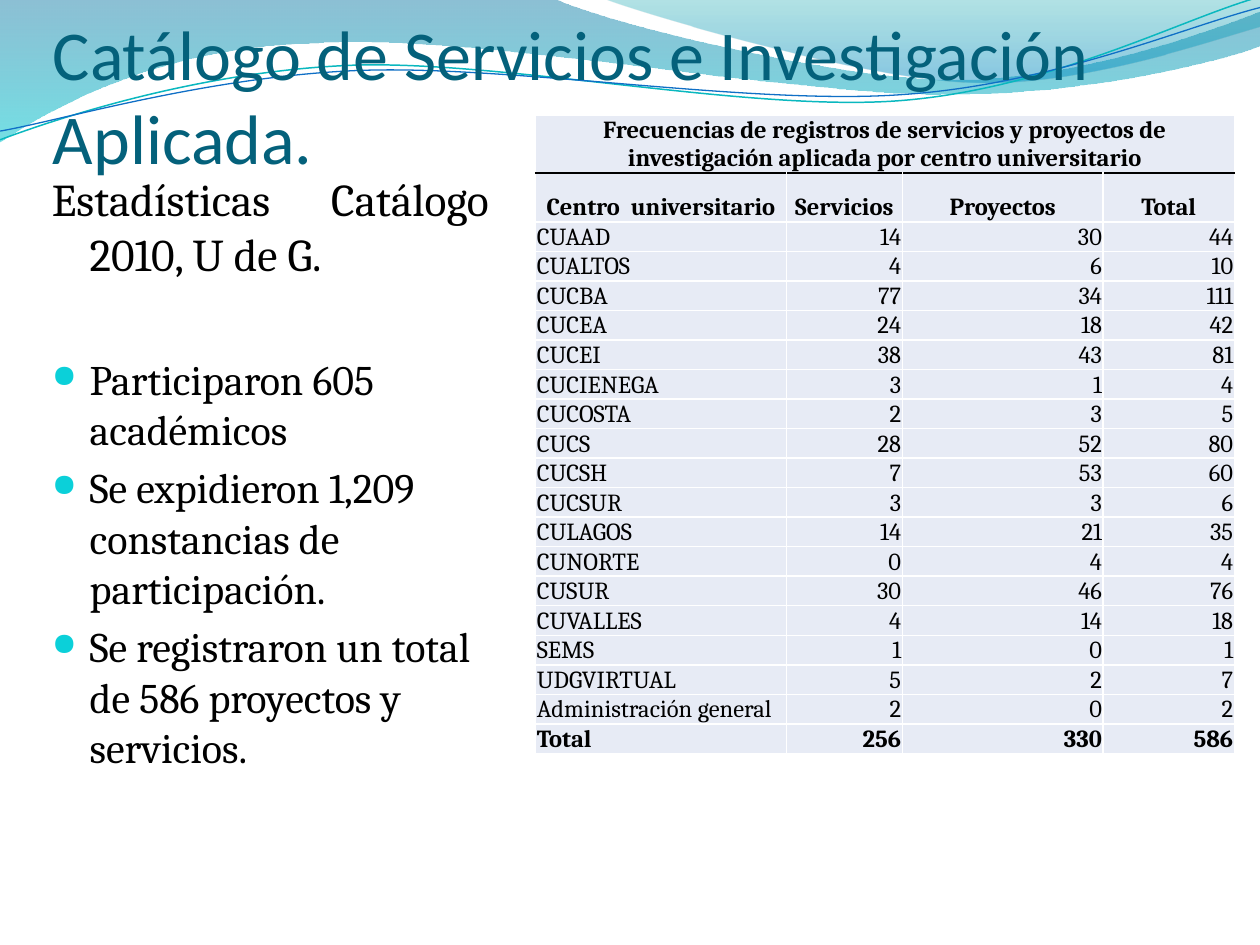
from dataclasses import dataclass

import pptx
import pptx.dml.color
import pptx.enum.text
import pptx.oxml.ns
import pptx.util
from lxml import etree

Pt = pptx.util.Pt
RGBColor = pptx.dml.color.RGBColor
Align = pptx.enum.text.PP_ALIGN
Anchor = pptx.enum.text.MSO_ANCHOR
qn = pptx.oxml.ns.qn

WHITE = RGBColor(0xFF, 0xFF, 0xFF)
BLACK = RGBColor(0, 0, 0)
TITLE_TEAL = RGBColor(0x04, 0x61, 0x7B)
BULLET_CYAN = RGBColor(0x0B, 0xD0, 0xD9)
CELL_FILL = RGBColor(0xE7, 0xEB, 0xF5)
LINE_TEAL = RGBColor(0x0A, 0xB8, 0xBF)
LINE_BLUE = RGBColor(0x0F, 0x6F, 0xC6)
DEEP_BLUE = RGBColor(0x00, 0x74, 0xA1)
AQUA = RGBColor(0x00, 0xC6, 0xCF)
SEA_GREEN = RGBColor(0x00, 0xA1, 0xA9)
SKY_BLUE = RGBColor(0x00, 0x8B, 0xBF)

BODY_FONT = "Cambria"
INDENT = Pt(21.6)
UNITS_PER_POINT = 100


@dataclass
class GradientStop:
    position: float
    color: RGBColor
    opacity: int


@dataclass
class Wave:
    """Outline in points: each segment is one line end or three Bezier points."""
    start: tuple
    segments: list
    stops: tuple = ()
    line_color: RGBColor | None = None
    line_width: float = 0


@dataclass
class BodyItem:
    text: str
    size: float
    space_before: float
    bulleted: bool = True


WAVES = [
    Wave((0, 0), [
        [(316.8, -0.7)],
        [(342.7, 12.2), (478.1, 45.4), (545.8, 45.4)],
        [(614.2, 45.4), (689.8, 18.7), (720, 6.5)],
        [(720.7, 25.9)],
        [(707.8, 31.7), (626.4, 54.7), (537.1, 54)],
        [(447.8, 54), (275, 20.2), (185, 24.5)],
        [(92.9, 25.9), (33.1, 59.8), (-0.7, 81.4)],
    ], stops=(GradientStop(0, DEEP_BLUE, 45), GradientStop(1, AQUA, 55))),
    Wave((344.9, -0.7), [
        [(366.5, 7.9), (491, 44.6), (553.7, 46.8)],
        [(616.3, 49.7), (691.9, 23), (720, 15.1)],
        [(720, 0)],
    ], stops=(GradientStop(0, SEA_GREEN, 30), GradientStop(0.8, SKY_BLUE, 45))),
    Wave((0, 79.9), [
        [(34.6, 67), (113.8, 41), (199.4, 37.4)],
        [(284.4, 33.8), (427, 64.1), (513.4, 57.6)],
        [(599.8, 51.1), (675.4, 10.8), (718.6, -1.4)],
    ], line_color=LINE_TEAL, line_width=0.85),
    Wave((0, 74.9), [
        [(33.8, 69.1), (118.1, 43.9), (203.8, 40.3)],
        [(290.2, 36.7), (429.8, 60.5), (516.2, 54)],
        [(601.9, 48.2), (677.5, 15.1), (720, 4.3)],
    ], line_color=LINE_BLUE, line_width=0.75),
]

BODY_ITEMS = [
    BodyItem("Estadísticas  Catálogo 2010, U de G.", 26, 0, bulleted=False),
    BodyItem("Participaron 605 académicos", 24, 41.5),
    BodyItem("Se expidieron 1,209 constancias de participación.", 24, 4.5),
    BodyItem("Se registraron un total de 586 proyectos y servicios.", 24, 4.5),
]

TABLE_TITLE = ("Frecuencias de registros de servicios y proyectos de "
               "investigación aplicada por centro universitario")
HEADINGS = ("Centro  universitario", "Servicios", "Proyectos", "Total")
RECORDS = [
    ("CUAAD", 14, 30, 44), ("CUALTOS", 4, 6, 10), ("CUCBA", 77, 34, 111),
    ("CUCEA", 24, 18, 42), ("CUCEI", 38, 43, 81), ("CUCIENEGA", 3, 1, 4),
    ("CUCOSTA", 2, 3, 5), ("CUCS", 28, 52, 80), ("CUCSH", 7, 53, 60),
    ("CUCSUR", 3, 3, 6), ("CULAGOS", 14, 21, 35), ("CUNORTE", 0, 4, 4),
    ("CUSUR", 30, 46, 76), ("CUVALLES", 4, 14, 18), ("SEMS", 1, 0, 1),
    ("UDGVIRTUAL", 5, 2, 7), ("Administración general", 2, 0, 2),
    ("Total", 256, 330, 586),
]
COLUMN_WIDTHS = (143.3, 66.2, 114.8, 75)
TITLE_ROW_HEIGHT, HEADING_ROW_HEIGHT, RECORD_ROW_HEIGHT = 32.8, 28, 16.87


def bend_segments(shape, segments: list) -> None:
    """Join the straight pieces of each three-point segment into one Bezier curve."""
    pieces = list(shape._element.iter(qn("a:lnTo")))
    for segment in segments:
        group, pieces = pieces[:len(segment)], pieces[len(segment):]
        if len(group) == 3:
            curve = etree.Element(qn("a:cubicBezTo"))
            group[0].addprevious(curve)
            for piece in group:
                curve.append(piece[0])
                piece.getparent().remove(piece)


def draw_wave(slide, wave: Wave) -> None:
    points = [wave.start] + [point for segment in wave.segments for point in segment]
    units = [(x * UNITS_PER_POINT, y * UNITS_PER_POINT) for x, y in points]
    builder = slide.shapes.build_freeform(*units[0], scale=Pt(1) / UNITS_PER_POINT)
    builder.add_line_segments(units[1:], close=bool(wave.stops))
    shape = builder.convert_to_shape()
    bend_segments(shape, wave.segments)
    shape.shadow.inherit = False
    if not wave.stops:
        shape.fill.background()
        shape.line.color.rgb = wave.line_color
        shape.line.width = Pt(wave.line_width)
        return
    shape.line.fill.background()
    shape.fill.gradient()
    shape.fill.gradient_angle = 270
    for gradient_stop, wanted in zip(shape.fill.gradient_stops, wave.stops):
        gradient_stop.position = wanted.position
        gradient_stop.color.rgb = wanted.color
    for color, wanted in zip(shape._element.spPr.iter(qn("a:srgbClr")), wave.stops):
        etree.SubElement(color, qn("a:alpha"), val=str(wanted.opacity * 1000))


def place_title(slide) -> None:
    title = slide.shapes.title
    slide.shapes._spTree.append(title._element)  # in front of the waves
    title.left, title.top, title.width, title.height = Pt(30.2), Pt(12.2), Pt(648), Pt(90)
    frame = title.text_frame
    frame.text = "Catálogo de Servicios e Investigación Aplicada."
    frame.word_wrap = True
    frame.auto_size = pptx.enum.text.MSO_AUTO_SIZE.NONE
    frame.vertical_anchor = Anchor.BOTTOM
    frame.margin_left = frame.margin_right = frame.margin_bottom = 0
    frame.margin_top = Pt(3.6)
    paragraph = frame.paragraphs[0]
    paragraph.alignment = Align.LEFT
    set_font(paragraph, "Calibri", 40, TITLE_TEAL)


def set_font(paragraph, name: str, size: float, color: RGBColor, bold: bool = False) -> None:
    font = paragraph.font
    font.name, font.size, font.bold = name, Pt(size), bold
    font.color.rgb = color


def set_hanging_indent(paragraph, bulleted: bool) -> None:
    properties = paragraph._p.get_or_add_pPr()
    properties.set("marL", str(INDENT))
    properties.set("indent", str(-INDENT))
    if bulleted:
        color = etree.SubElement(properties, qn("a:buClr"))
        etree.SubElement(color, qn("a:srgbClr"), val=str(BULLET_CYAN))
        etree.SubElement(properties, qn("a:buSzPct"), val="75000")
        etree.SubElement(properties, qn("a:buChar"), char="●")


def draw_body(slide) -> None:
    frame = slide.shapes.add_textbox(Pt(22.6), Pt(123.8), Pt(264.2), Pt(354.2)).text_frame
    frame.word_wrap = True
    frame.vertical_anchor = Anchor.MIDDLE
    frame.margin_bottom = Pt(66.3)
    for index, item in enumerate(BODY_ITEMS):
        paragraph = frame.add_paragraph() if index else frame.paragraphs[0]
        paragraph.text = item.text
        paragraph.alignment = Align.LEFT if item.bulleted else Align.JUSTIFY
        paragraph.space_before = Pt(item.space_before)
        set_hanging_indent(paragraph, item.bulleted)
        set_font(paragraph, BODY_FONT, item.size, BLACK)


def format_cell(cell, text: str, alignment, bold: bool, black_side: str = "") -> None:
    cell.text = text
    cell.vertical_anchor = Anchor.BOTTOM
    cell.margin_left = cell.margin_right = cell.margin_top = Pt(0.7)
    cell.margin_bottom = 0
    properties = cell._tc.get_or_add_tcPr()
    for side in "LRTB":
        line = etree.SubElement(properties, qn(f"a:ln{side}"), w=str(Pt(1)))
        fill = etree.SubElement(line, qn("a:solidFill"))
        color = BLACK if side == black_side else WHITE
        etree.SubElement(fill, qn("a:srgbClr"), val=str(color))
    cell.fill.solid()
    cell.fill.fore_color.rgb = CELL_FILL
    paragraph = cell.text_frame.paragraphs[0]
    paragraph.alignment = alignment
    set_font(paragraph, BODY_FONT, 14, BLACK, bold)


def draw_table(slide) -> None:
    heights = [TITLE_ROW_HEIGHT, HEADING_ROW_HEIGHT] + [RECORD_ROW_HEIGHT] * len(RECORDS)
    table = slide.shapes.add_table(len(heights), len(HEADINGS), Pt(306.1), Pt(66),
                                   Pt(sum(COLUMN_WIDTHS)), Pt(sum(heights))).table
    table.first_row = table.horz_banding = False
    for column, width in zip(table.columns, COLUMN_WIDTHS):
        column.width = Pt(width)
    for row, height in zip(table.rows, heights):
        row.height = Pt(height)
    table.cell(0, 0).merge(table.cell(0, len(HEADINGS) - 1))
    for column, heading in enumerate(HEADINGS):
        format_cell(table.cell(0, column), "" if column else TABLE_TITLE, Align.CENTER, True, "B")
        format_cell(table.cell(1, column), heading, Align.CENTER, True, "T")
    for row, record in enumerate(RECORDS, start=2):
        for column, value in enumerate(record):
            format_cell(table.cell(row, column), str(value),
                        Align.RIGHT if column else Align.LEFT, record[0] == "Total")


def main() -> None:
    presentation = pptx.Presentation()
    presentation.slide_width, presentation.slide_height = Pt(720), Pt(540)
    slide = presentation.slides.add_slide(presentation.slide_layouts[5])
    for wave in WAVES:
        draw_wave(slide, wave)
    draw_body(slide)
    place_title(slide)
    draw_table(slide)
    presentation.save("out.pptx")


if __name__ == "__main__":
    main()
